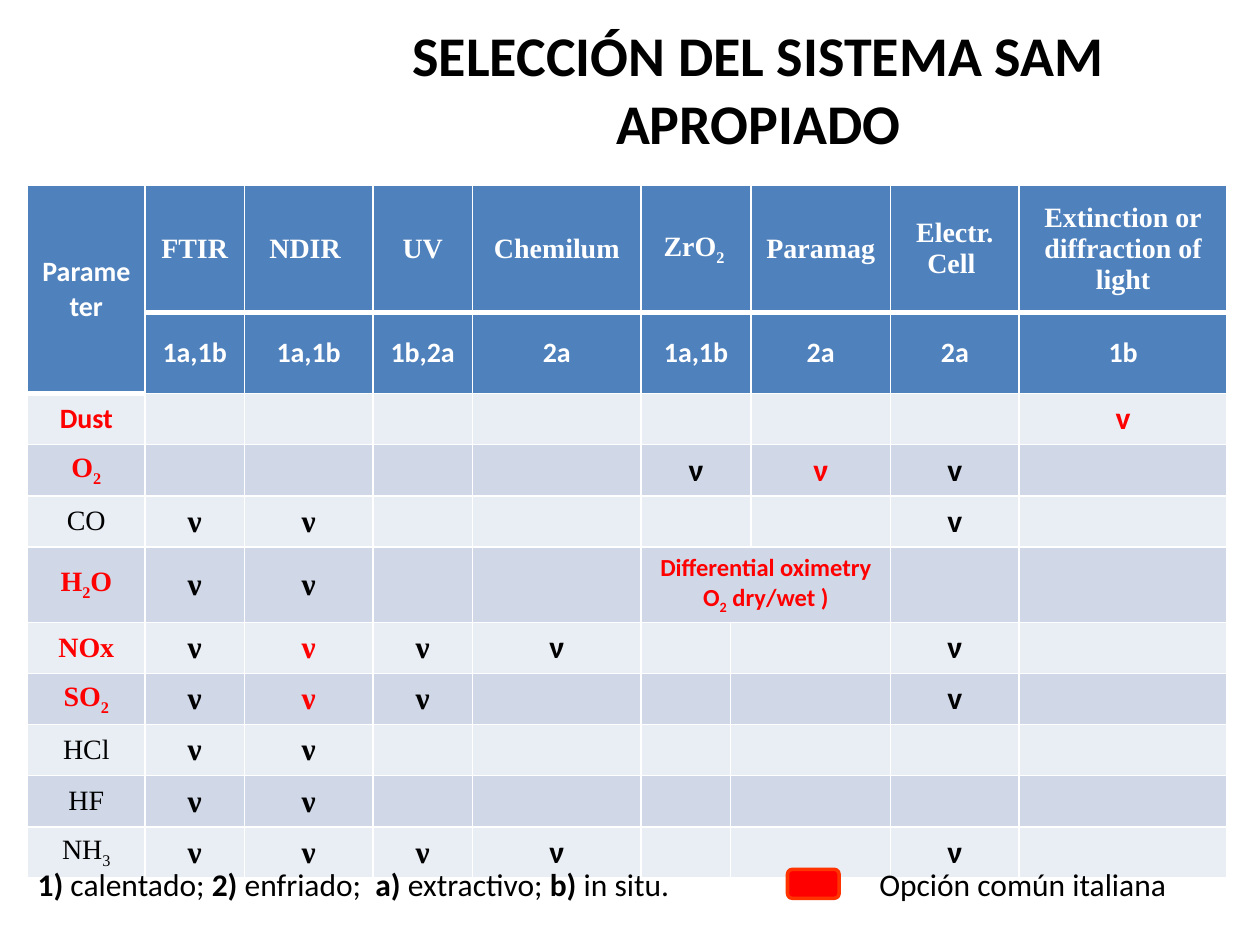
from dataclasses import dataclass

from lxml import etree
from pptx import Presentation
from pptx.dml.color import RGBColor
from pptx.enum.shapes import MSO_SHAPE
from pptx.enum.text import MSO_ANCHOR, MSO_AUTO_SIZE, PP_ALIGN
from pptx.oxml.ns import qn
from pptx.slide import Slide
from pptx.util import Inches, Pt

COLORS = {
    "black": "000000", "white": "FFFFFF", "red": "FF0000", "outline": "FF3300",
    "header": "4F81BD", "light": "E9EDF4", "dark": "D0D8E8",
}
SANS, SERIF = "Calibri", "Times New Roman"

COLUMN_WIDTHS = [0.93, 0.79, 1.02, 0.79, 1.34, 0.71, 0.16, 1.11, 1.02, 1.65]
ROW_HEIGHTS = [1.01, 0.43] + [0.35] * 3 + [0.39] + [0.35] * 5
# First row, first column, last row, last column
MERGES = (
    [(0, 0, 1, 0), (5, 5, 5, 7)]
    + [(row, 5, row, 6) for row in range(5)]
    + [(row, 6, row, 7) for row in range(6, 11)]
)
# Column: (method, configuration); text between ~ marks is subscript
METHODS = {
    1: ("FTIR", "1a,1b"), 2: ("NDIR ", "1a,1b"), 3: ("UV", "1b,2a"),
    4: ("Chemilum", "2a"), 5: ("ZrO~2 ~", "1a,1b"), 7: ("Paramag ", "2a"),
    8: ("Electr.\nCell ", "2a"), 9: ("Extinction or\vdiffraction of light", "1b"),
}
# Parameter, whether it is commonly measured, marks by column, column of the common option
PARAMETERS = [
    ("Dust", True, {9: "v"}, 9),
    ("O~2~", True, {5: "ν", 7: "ν", 8: "v"}, 7),
    ("CO", False, {1: "ν", 2: "ν", 8: "v"}, None),
    ("H~2~O", True, {1: "ν", 2: "ν"}, None),
    ("NOx", True, {1: "ν", 2: "ν", 3: "ν", 4: "ν", 8: "ν"}, 2),
    ("SO~2~", True, {1: "ν", 2: "ν", 3: "ν", 8: "v"}, 2),
    ("HCl", False, {1: "ν", 2: "ν"}, None),
    ("HF", False, {1: "ν", 2: "ν"}, None),
    ("NH~3~", False, {1: "ν", 2: "ν", 3: "ν", 4: "ν", 8: "ν"}, None),
]


def rgb(name):
    return RGBColor.from_string(COLORS[name])


@dataclass
class SlideBuilder:
    page: Slide
    font: str = SANS
    size: int = 18

    def set_text(self, frame, text, size=None, color="black", bold=False, font=None,
                 align=PP_ALIGN.CENTER):
        """Fill a frame: newline starts a paragraph, ~ toggles subscript, | toggles bold."""
        for number, line in enumerate(text.split("\n")):
            paragraph = frame.add_paragraph() if number else frame.paragraphs[0]
            paragraph.alignment = align
            paragraph.font.name = font or self.font
            paragraph.font.size = Pt(size or self.size)
            paragraph.font.color.rgb = rgb(color)
            if "|" not in line:
                paragraph.font.bold = bold
            for strong, part in enumerate(line.split("|")):
                for lowered, piece in enumerate(part.split("~")):
                    for broken, words in enumerate(piece.split("\v")):
                        if broken:
                            paragraph.add_line_break()
                        if not words:
                            continue
                        span = paragraph.add_run()
                        span.text = words
                        if "|" in line:
                            span.font.bold = strong % 2 == 1
                        if lowered % 2:
                            span._r.get_or_add_rPr().set("baseline", "-25000")

    def text(self, left, top, width, height, words, **style):
        box = self.page.shapes.add_textbox(
            Inches(left), Inches(top), Inches(width), Inches(height))
        box.text_frame.word_wrap = True
        self.set_text(box.text_frame, words, **style)
        return box.text_frame

    def note(self, left, width, words):
        frame = self.text(left, 6.82, width, 0.4, words, align=PP_ALIGN.LEFT)
        frame.auto_size = MSO_AUTO_SIZE.SHAPE_TO_FIT_TEXT
        properties = frame.paragraphs[0]._p.get_or_add_pPr()
        properties.set("marL", str(Inches(0.38)))
        properties.set("indent", str(-Inches(0.38)))

    def swatch(self, left, top, width, height):
        shape = self.page.shapes.add_shape(
            MSO_SHAPE.ROUNDED_RECTANGLE,
            Inches(left), Inches(top), Inches(width), Inches(height))
        shape.shadow.inherit = False
        shape.fill.solid()
        shape.fill.fore_color.rgb = rgb("red")
        shape.line.color.rgb = rgb("outline")
        shape.line.width = Pt(2)

    def table(self, left, top, widths, heights, merges):
        grid = self.page.shapes.add_table(
            len(heights), len(widths), Inches(left), Inches(top),
            Inches(sum(widths)), Inches(sum(heights))).table
        grid.first_row = grid.horz_banding = False
        for column, width in zip(grid.columns, widths):
            column.width = Inches(width)
        for row, height in zip(grid.rows, heights):
            row.height = Inches(height)
        for row, column, last_row, last_column in merges:
            grid.cell(row, column).merge(grid.cell(last_row, last_column))
        for row in range(len(heights)):
            fill = "header" if row < 2 else ("light", "dark")[row % 2]
            for column in range(len(widths)):
                self.style_cell(grid.cell(row, column), fill, 3 if row == 0 else 1)
        return grid

    def style_cell(self, cell, fill, bottom):
        cell.vertical_anchor = MSO_ANCHOR.MIDDLE
        properties = cell._tc.get_or_add_tcPr()
        for side, width in (("L", 1), ("R", 1), ("T", 1), ("B", bottom)):
            line = etree.SubElement(properties, qn(f"a:ln{side}"), w=str(Pt(width)))
            solid = etree.SubElement(line, qn("a:solidFill"))
            etree.SubElement(solid, qn("a:srgbClr"), val=COLORS["white"])
        cell.fill.solid()
        cell.fill.fore_color.rgb = rgb(fill)


def fill_table(builder, grid):
    def put(row, column, words, **style):
        builder.set_text(grid.cell(row, column).text_frame, words, **style)

    heading = {"size": 16, "color": "white", "bold": True}
    put(0, 0, "Parameter", **heading)
    for column, (method, configuration) in METHODS.items():
        put(0, column, method, font=SERIF, **heading)
        put(1, column, configuration, **heading)

    for row, (name, common, marks, option) in enumerate(PARAMETERS, start=2):
        put(row, 0, name, size=16, color="red" if common else "black", bold=common,
            font=SANS if name == "Dust" else SERIF)
        for column, mark in marks.items():
            put(row, column, mark, bold=True, font=SERIF if column < 4 else SANS,
                color="red" if column == option else "black")
    put(5, 5, "Differential oximetry\nO~2~ dry/wet )", size=14, color="red", bold=True)


def main():
    deck = Presentation()
    deck.slide_width, deck.slide_height = Inches(10), Inches(7.5)
    builder = SlideBuilder(deck.slides.add_slide(deck.slide_layouts[6]))

    grid = builder.table(0.22, 1.47, COLUMN_WIDTHS, ROW_HEIGHTS, MERGES)
    fill_table(builder, grid)
    builder.note(0.2, 5.75, "|1)| calentado; |2)| enfriado;  |a) |extractivo; |b)| in situ.")
    builder.swatch(6.25, 6.9, 0.41, 0.23)
    builder.note(6.88, 2.85, "Opción común italiana")
    title = builder.text(2.27, 0.23, 7.5, 0.94, "SELECCIÓN DEL SISTEMA SAM APROPIADO",
                         size=32, bold=True)
    title.vertical_anchor = MSO_ANCHOR.MIDDLE
    deck.save("out.pptx")


if __name__ == "__main__":
    main()
